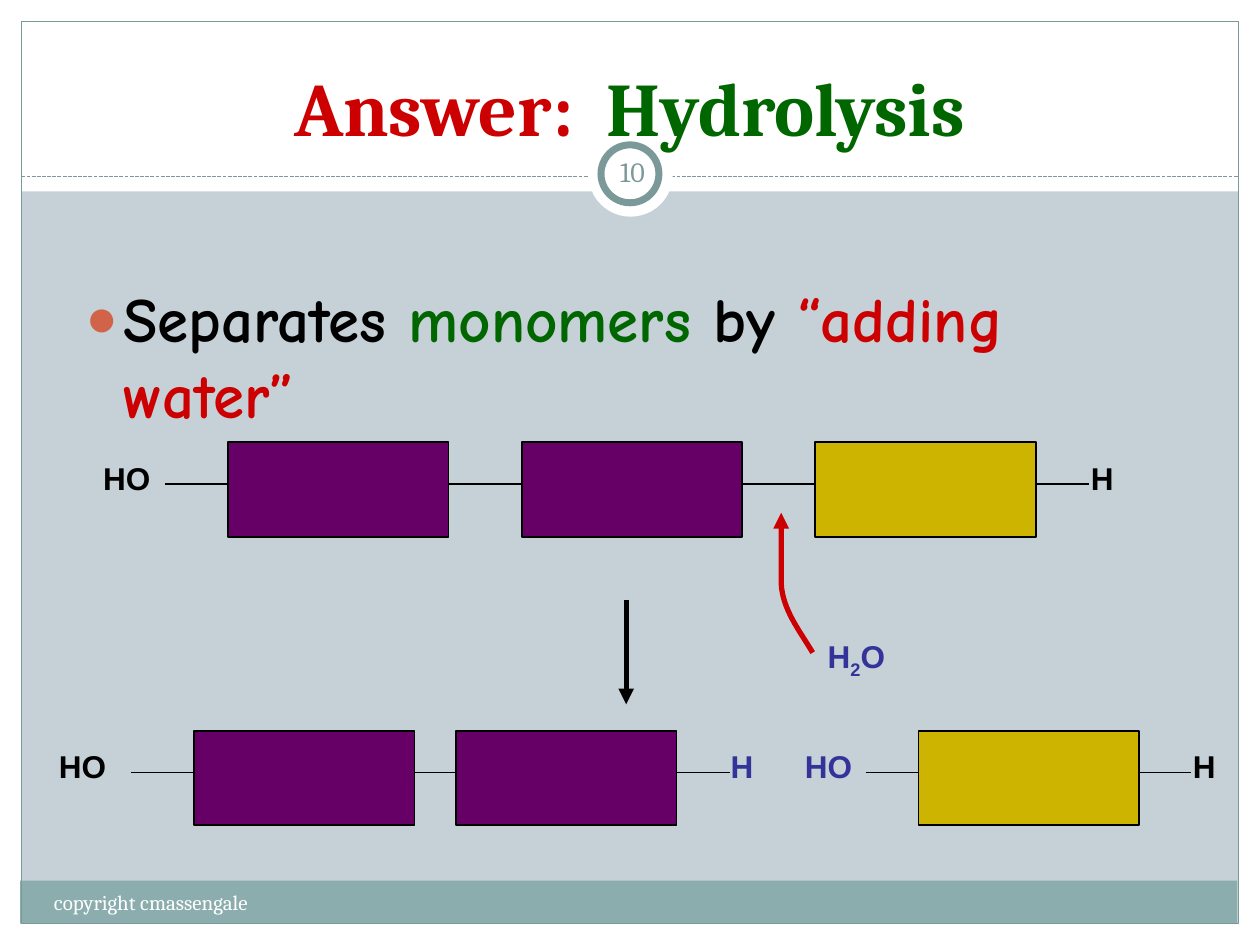
import pptx
import pptx.dml.color
import pptx.enum.dml
import pptx.enum.shapes
import pptx.enum.text
import pptx.oxml
import pptx.oxml.ns
import pptx.util

PX = 9144  # EMU per px, 100 px to the inch
SHAPE = pptx.enum.shapes.MSO_SHAPE
ANCHOR = pptx.enum.text.MSO_ANCHOR
ALIGN = pptx.enum.text.PP_ALIGN
FIT = pptx.enum.text.MSO_AUTO_SIZE

BLACK, WHITE, RED, GREEN, BLUE = "000000", "FFFFFF", "CC0000", "006600", "333399"
PURPLE, GOLD, SLATE, TEAL = "660066", "CCB400", "7C999A", "8CADAE"

TITLE = {"name": "Cambria", "size": pptx.util.Pt(43.2), "bold": True}
BODY = {"name": "Comic Neue", "size": pptx.util.Pt(36), "bold": True}
FOOTER = {"name": "Cambria", "size": pptx.util.Pt(12)}
NUMBER = {"name": "Cambria", "size": pptx.util.Pt(16)}
LABEL = {"name": "Arial", "size": pptx.util.Pt(18), "bold": True}


def px(*values):
    return [pptx.util.Emu(v * PX) for v in values]


def rgb(code):
    return pptx.dml.color.RGBColor.from_string(code)


def add_xml(parent, tag, **attrs):
    e = parent.makeelement(pptx.oxml.ns.qn("a:" + tag), attrs)
    parent.append(e)
    return e


class Deck:
    """Style and current slide."""

    def __init__(self, width, height, background):
        self.prs = pptx.Presentation()
        self.prs.slide_width, self.prs.slide_height = px(width, height)
        self.slide = self.prs.slides.add_slide(self.prs.slide_layouts[1])
        fill = self.slide.background.fill
        fill.solid()
        fill.fore_color.rgb = rgb(background)

    def outline(self, sp, color, width, arrow=False):
        sp.line.color.rgb = rgb(color)
        sp.line.width = pptx.util.Pt(width)
        if arrow:
            add_xml(sp.line._get_or_add_ln(), "tailEnd", type="triangle")

    def box(self, x, y, w, h, fill=None, line=None, width=1, kind=SHAPE.RECTANGLE):
        sp = self.slide.shapes.add_shape(kind, *px(x, y, w, h))
        sp.shadow.inherit = False
        if fill:
            sp.fill.solid()
            sp.fill.fore_color.rgb = rgb(fill)
        else:
            sp.fill.background()
        if line:
            self.outline(sp, line, width)
        else:
            sp.line.fill.background()

    def line(self, x1, y1, x2, y2, color=BLACK, width=1, arrow=False, dash=None):
        sp = self.slide.shapes.add_connector(
            pptx.enum.shapes.MSO_CONNECTOR.STRAIGHT, *px(x1, y1, x2, y2))
        self.outline(sp, color, width, arrow)
        if dash:
            sp.line.dash_style = dash
        add_xml(sp._element.spPr, "effectLst")

    def curve(self, segments, color, width, steps=16):
        """Draw cubic segments as one open outline with an arrowhead."""
        points = []
        for a, b, c, d in segments:
            for i in range(1, steps + 1):
                t = i / steps
                u = 1 - t
                points.append([
                    round(PX * (u**3 * a[k] + 3 * u * u * t * b[k]
                                + 3 * u * t * t * c[k] + t**3 * d[k]))
                    for k in (0, 1)])
        fb = self.slide.shapes.build_freeform(*px(*segments[0][0]))
        fb.add_line_segments(points, close=False)
        sp = fb.convert_to_shape()
        sp.shadow.inherit = False
        sp.fill.background()
        self.outline(sp, color, width, arrow=True)

    def set_text(self, tf, runs, style, **frame):
        """Fill a text frame with (text, color[, baseline]) runs."""
        for key, value in frame.items():
            setattr(tf, key, value)
        p = tf.paragraphs[0]
        for text, color, *baseline in runs:
            r = p.add_run()
            r.text = text
            for key, value in style.items():
                setattr(r.font, key, value)
            r.font.color.rgb = rgb(color)
            if baseline:
                r.font._element.set("baseline", baseline[0])
        return p

    def text(self, x, y, w, h, runs, style, **frame):
        sp = self.slide.shapes.add_textbox(*px(x, y, w, h))
        return self.set_text(sp.text_frame, runs, style, **frame)

    def label(self, x, y, w, *runs):
        self.text(x, y, w, 50, runs, LABEL, word_wrap=False,
                  auto_size=FIT.SHAPE_TO_FIT_TEXT)

    def placeholder(self, idx, x, y, w, h, runs, style, **frame):
        sp = self.slide.placeholders[idx]
        sp.left, sp.top, sp.width, sp.height = px(x, y, w, h)
        self.slide.shapes._spTree.append(sp._element)  # in front of the frame
        return self.set_text(sp.text_frame, runs, style, auto_size=FIT.NONE, **frame)

    def bullet(self, p, indent, char, color, percent):
        pPr = p._p.get_or_add_pPr()
        pPr.set("marL", str(indent * PX))
        pPr.set("indent", str(-indent * PX))
        add_xml(add_xml(pPr, "buClr"), "srgbClr", val=color)
        add_xml(pPr, "buSzPct", val=str(percent * 1000))
        add_xml(pPr, "buChar", char=char)


def main():
    deck = Deck(1000, 750, "C5D1D7")

    # Frame: white margins, footer band, border, rule and number ring
    for area in ((0, 733, 1000, 17), (0, 0, 1000, 152),
                 (0, 0, 17, 750), (983, 0, 17, 750)):
        deck.box(*area, fill=WHITE)
    deck.box(16, 699, 966, 34, fill=TEAL)
    deck.box(17, 17, 966, 716, line=SLATE, width=0.75)
    deck.line(17, 140, 983, 140, SLATE, 0.75,
              dash=pptx.enum.dml.MSO_LINE.SQUARE_DOT)
    deck.box(467, 105, 67, 67, fill=WHITE, kind=SHAPE.OVAL)
    deck.box(477, 115, 46, 46, fill=WHITE, line=SLATE, width=4, kind=SHAPE.OVAL)

    # Title, footer, slide number and body
    p = deck.placeholder(0, 108, 58, 783, 67,
                         [("Answer:  ", RED), ("Hydrolysis", GREEN)],
                         TITLE, vertical_anchor=ANCHOR.BOTTOM)
    p.alignment = ALIGN.CENTER
    deck.text(33, 701, 392, 40, [("copyright cmassengale", WHITE)], FOOTER,
              word_wrap=True)
    inset = px(5)[0]
    p = deck.text(477, 112, 50, 48, [("10", SLATE)], NUMBER, word_wrap=True,
                  vertical_anchor=ANCHOR.MIDDLE, margin_left=inset,
                  margin_right=inset, margin_top=inset, margin_bottom=inset)
    p.alignment = ALIGN.CENTER
    p = deck.placeholder(1, 58, 217, 883, 450,
                         [("Separates ", BLACK), ("monomers", GREEN),
                          (" by ", BLACK), ("“adding water”", RED)], BODY)
    deck.bullet(p, 30, "●", "D16349", 85)

    # Monomer chains: boxes, bonds and end groups
    chains = [
        (351, [(181, PURPLE), (414, PURPLE), (647, GOLD)],
         [(131, 181), (356, 414), (589, 647), (822, 864)],
         [("HO", 72, 70, BLACK), ("H", 856, 44, BLACK)]),
        (580, [(154, PURPLE), (362, PURPLE), (729, GOLD)],
         [(104, 154), (329, 362), (537, 579), (687, 729), (904, 945)],
         [("HO", 37, 70, BLACK), ("H", 570, 44, BLUE),
          ("HO", 629, 70, BLUE), ("H", 937, 44, BLACK)]),
    ]
    for top, monomers, bonds, ends in chains:
        for x, color in monomers:
            deck.box(x, top, 175, 75, fill=color, line=BLACK)
        for x1, x2 in bonds:
            deck.line(x1, top + 33, x2, top + 33)
        for text, x, w, color in ends:
            deck.label(x, top + 8, w, (text, color))

    # Reaction arrow and incoming water
    deck.line(497, 476, 497, 559, width=3, arrow=True)
    deck.label(647, 501, 82, ("H", BLUE), ("2", BLUE, "-25000"), ("O", BLUE))
    deck.curve([((645, 518), (635, 501), (621, 484), (620, 463)),
                ((620, 463), (620, 445), (620, 426), (620, 407))], RED, 3)

    deck.prs.save("out.pptx")


if __name__ == "__main__":
    main()
